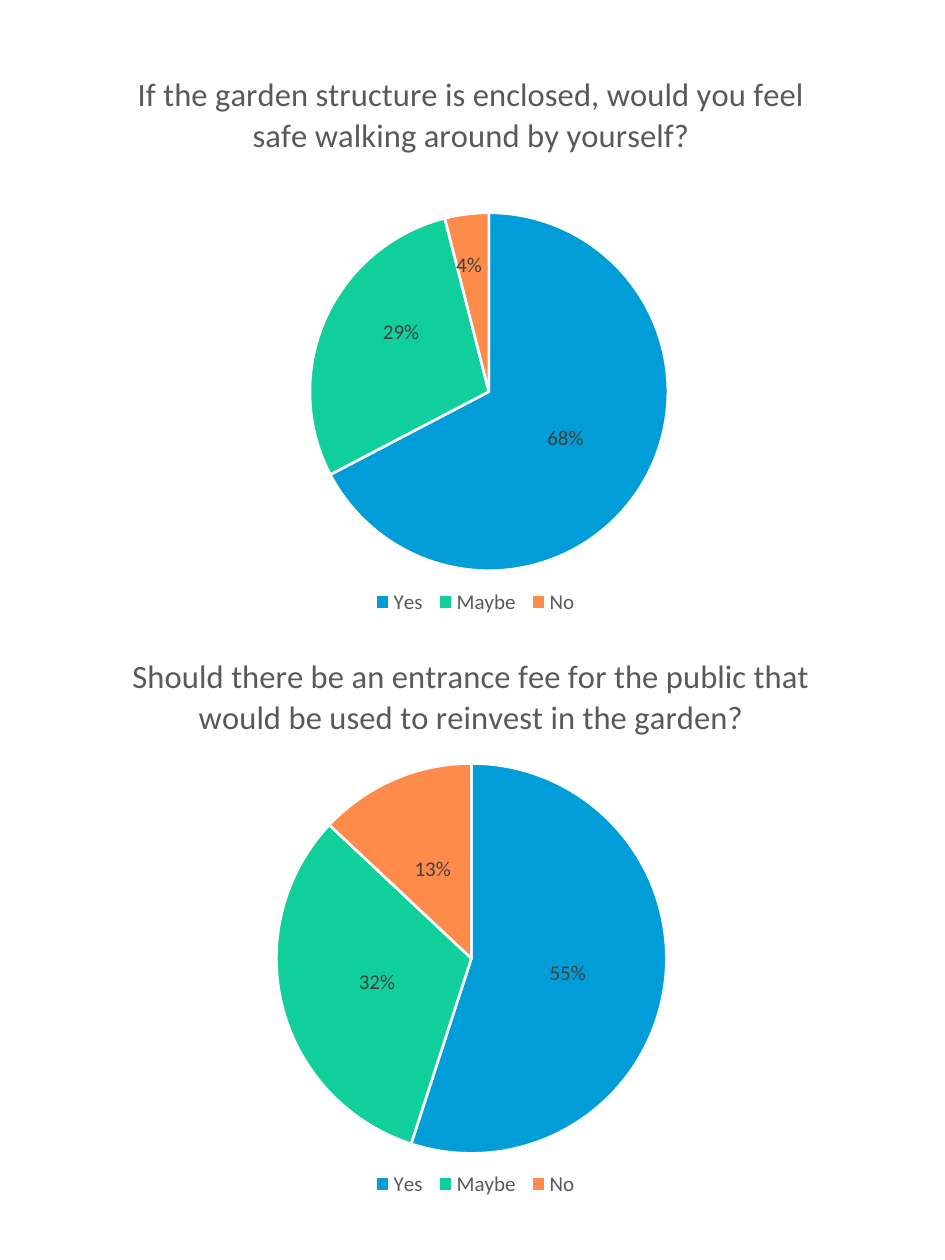
import copy

from pptx import Presentation
from pptx import util as u
from pptx.chart import data as cd
from pptx.dml import color
from pptx.enum import chart as ch
from pptx.oxml import parse_xml
from pptx.oxml.ns import nsdecls, qn

COLORS = {
    "Yes": "009DD9",
    "Maybe": "10CF9B",
    "No": "FF8B4B",
    "text": "595959",
    "label": "404040",
    "border": "FFFFFF",
}
FONT = "Calibri"
ANSWERS = ["Yes", "Maybe", "No"]
LEGEND_PLACE = {"x": 0.381, "y": 0.918, "w": 0.249, "h": 0.059}
# question, percentages, title position, pie area, label shifts (fractions of the chart)
QUESTIONS = [
    ("If the garden structure is enclosed, would you feel safe walking around by yourself?",
     (68, 29, 4), {"x": 0.112, "y": 0.026},
     {"x": 0.316, "y": 0.279, "w": 0.41, "h": 0.615},
     {"Maybe": {"x": -0.007, "y": -0.04}, "No": {"x": -0.01, "y": -0.065}}),
    ("Should there be an entrance fee for the public that would be used to reinvest in the garden?",
     (55, 32, 13), {"x": 0.106, "y": 0.026},
     {"x": 0.277, "y": 0.225, "w": 0.448, "h": 0.67}, {}),
]


def rgb(name):
    return color.RGBColor.from_string(COLORS[name])


def style_font(font, size, name):
    font.name = FONT
    font.size = u.Pt(size)
    font.bold = False
    font.color.rgb = rgb(name)


def layout_xml(place, inner=False, edge=True):
    """Manual layout element with positions as fractions of the chart."""
    target = '<c:layoutTarget val="inner"/>' if inner else ""
    modes = "".join(f'<c:{k}Mode val="edge"/>' for k in "xy") if edge else ""
    values = "".join(f'<c:{k} val="{v}"/>' for k, v in place.items())
    return parse_xml(f'<c:layout {nsdecls("c")}><c:manualLayout>{target}{modes}{values}'
                     '</c:manualLayout></c:layout>')


def set_layout(parent, layout, before):
    for old in parent.xpath("./c:layout"):
        parent.remove(old)
    parent.xpath(f"./c:{before}")[0].addprevious(layout)


def shift_labels(labels, shifts):
    """Move single labels off their centred position, keeping the common style."""
    box = labels._element
    for lines in box.xpath("./c:showLeaderLines"):
        lines.set("val", "0")
    common = [e for e in box if e.tag != qn("c:showLeaderLines")]
    for i, (answer, shift) in enumerate(shifts.items()):
        label = parse_xml(f'<c:dLbl {nsdecls("c")}>'
                          f'<c:idx val="{ANSWERS.index(answer)}"/></c:dLbl>')
        label.append(layout_xml(shift, edge=False))
        label.extend([copy.deepcopy(e) for e in common])
        box.insert(i, label)


def add_question_pie(s, box, question, percentages, title_place, pie_place, shifts):
    data = cd.CategoryChartData(number_format='0"%"')
    data.categories = ANSWERS
    data.add_series("Series 1", percentages)
    chart = s.shapes.add_chart(ch.XL_CHART_TYPE.PIE, *box, data).chart
    style_font(chart.font, 10, "text")

    chart.has_title = True
    title = chart.chart_title
    tf = title.text_frame
    tf.text = question
    style_font(tf.paragraphs[0].runs[0].font, 18.6, "text")
    title.include_in_layout = False
    set_layout(title._element, layout_xml(title_place), "overlay")

    chart.has_legend = True
    legend = chart.legend
    legend.position = ch.XL_LEGEND_POSITION.BOTTOM
    legend.include_in_layout = False
    style_font(legend.font, 12, "text")
    set_layout(legend._element, layout_xml(LEGEND_PLACE), "overlay")

    plot = chart.plots[0]
    plot.vary_by_categories = True
    set_layout(chart._chartSpace.chart.plotArea, layout_xml(pie_place, True), "pieChart")
    series = plot.series[0]
    for i, answer in enumerate(ANSWERS):
        fmt = series.points[i].format
        fmt.fill.solid()
        fmt.fill.fore_color.rgb = rgb(answer)
        fmt.line.color.rgb = rgb("border")
        fmt.line.width = u.Pt(1.5)

    labels = series.data_labels
    labels.show_value = True
    labels.show_percentage = False
    labels.number_format = '0"%"'
    labels.number_format_is_linked = False
    labels.position = ch.XL_LABEL_POSITION.CENTER
    style_font(labels.font, 12, "label")
    shift_labels(labels, shifts)


def main():
    prs = Presentation()
    prs.slide_width, prs.slide_height = u.Inches(7.5), u.Inches(10)
    s = prs.slides.add_slide(prs.slide_layouts[6])
    left, top, width, height = (u.Inches(v) for v in (0.27, 0.4, 6.93, 4.62))
    for i, question in enumerate(QUESTIONS):
        add_question_pie(s, (left, top + i * height, width, height), *question)
    prs.save("out.pptx")


if __name__ == "__main__":
    main()
